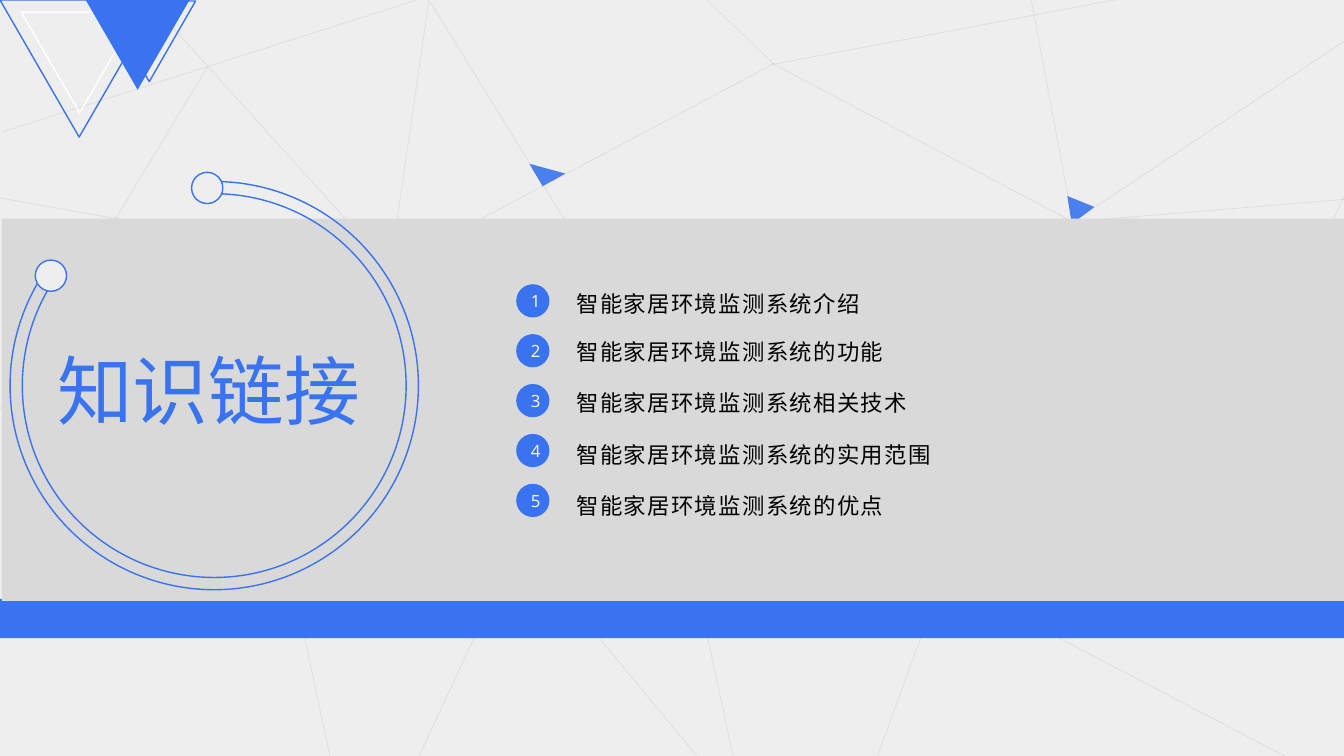
from lxml.etree import SubElement
from pptx import Presentation
from pptx.dml.color import RGBColor
from pptx.enum.shapes import MSO_CONNECTOR as Connector, MSO_SHAPE as Shape
from pptx.enum.text import MSO_ANCHOR as Anchor, MSO_AUTO_SIZE as AutoSize, PP_ALIGN as Align
from pptx.oxml.ns import qn
from pptx.util import Inches, Pt

BLUE = RGBColor(0x39, 0x73, 0xEF)
WHITE = RGBColor(0xFF, 0xFF, 0xFF)
BLACK = RGBColor(0x00, 0x00, 0x00)
PALE = RGBColor(0xEE, 0xEE, 0xEE)
PANEL = RGBColor(0xD9, 0xD9, 0xD9)
WEB = RGBColor(0xBF, 0xBF, 0xBF)

LATIN = "Open Sans"
CHINESE = "Noto Sans CJK SC"

WEB_LINES = [
    (1.43, -0.04, 3.87, 2.66), (3.87, 2.66, 4.26, -0.04), (7.68, 0.63, 3.85, 2.66),
    (4.26, -0.04, 0.02, 1.31), (7.32, 7.73, 6.42, 3.53), (3.83, 8.2, 5.15, 5.37),
    (-0.46, 4.82, 2.06, 0.66), (10.64, 2.2, 8.55, 7.92), (4.26, 0.01, 6.44, 3.54),
    (10.64, 2.2, 7.66, 0.63), (12.95, 7.61, 9.34, 5.72), (3.45, 8.34, 2.81, 5.33),
    (-1.15, 1.76, 3.86, 2.65), (-0.04, 6.34, 2.81, 5.33), (10.64, 2.2, 10.23, 0.01),
    (7.68, 0.64, 6.49, -0.5), (11.95, -0.17, 7.66, 0.64), (7.02, 7.63, 5.15, 5.37),
    (13.51, 0.29, 10.64, 2.2), (13.89, 5.46, 12.11, 4.6), (13.68, 1.95, 10.64, 2.2),
    (13.33, 1.95, 12.11, 4.6), (1.12, 2.17, 2.8, 5.32),
]

CORNER_TRIANGLES = [
    ((0, 0, 1.57, 1.36), None, BLUE),
    ((0.21, 0.12, 1.16, 1), None, WHITE),
    ((1.02, 0.01, 0.92, 0.8), None, BLUE),
    ((1.03, 0.08, 0.68, 0.58), None, WHITE),
    ((0.85, 0, 1.03, 0.89), BLUE, None),
]

TOPICS = [
    ("智能家居环境监测系统介绍", 2.71, 3.53),
    ("智能家居环境监测系统的功能", 3.18, 3.53),
    ("智能家居环境监测系统相关技术", 3.69, 3.53),
    ("智能家居环境监测系统的实用范围", 4.2, 4.1),
    ("智能家居环境监测系统的优点", 4.71, 4.1),
]
BADGE_TOP = 2.82
BADGE_STEP = 0.495


class SlideBuilder:
    def __init__(self, slide):
        self.slide = slide
        self.shapes = slide.shapes

    def start_group(self):
        self.shapes = self.slide.shapes.add_group_shape().shapes

    def end_group(self):
        self.shapes = self.slide.shapes

    def set_opacity(self, shape, percent):
        color = shape._element.spPr.find(".//" + qn("a:srgbClr"))
        SubElement(color, qn("a:alpha")).set("val", str(percent * 1000))

    def shape(self, kind, box, fill=None, line=None, rotation=0, opacity=100):
        shape = self.shapes.add_shape(kind, *map(Inches, box))
        shape.shadow.inherit = False
        shape.rotation = rotation
        if fill is None:
            shape.fill.background()
        else:
            shape.fill.solid()
            shape.fill.fore_color.rgb = fill
        if line is None:
            shape.line.fill.background()
        else:
            shape.line.color.rgb = line
            shape.line.width = Pt(1)
        if opacity < 100:
            self.set_opacity(shape, opacity)
        return shape

    def web_line(self, ends):
        connector = self.shapes.add_connector(Connector.STRAIGHT, *map(Inches, ends))
        connector.line.color.rgb = WEB
        connector.line.width = Pt(0.5)
        self.set_opacity(connector, 35)
        SubElement(connector._element.spPr, qn("a:effectLst"))

    def label(self, shape, text, size, font, color, spacing=0):
        paragraph = shape.text_frame.paragraphs[0]
        paragraph.text = text
        run = paragraph.runs[0]
        run.font.size = Pt(size)
        run.font.name = font
        run.font.color.rgb = color
        properties = run._r.get_or_add_rPr()
        SubElement(properties, qn("a:ea")).set("typeface", font)
        if spacing:
            properties.set("spc", str(spacing * 100))
        return paragraph

    def text(self, box, text, size, font, color, spacing=0):
        textbox = self.shapes.add_textbox(*map(Inches, box))
        textbox.text_frame.word_wrap = True
        textbox.text_frame.auto_size = AutoSize.SHAPE_TO_FIT_TEXT
        return self.label(textbox, text, size, font, color, spacing)

    def badge(self, number, top):
        badge = self.shape(Shape.OVAL, (5.12, top, 0.33, 0.33), BLUE)
        badge.text_frame.vertical_anchor = Anchor.MIDDLE
        paragraph = self.label(badge, str(number), 12, LATIN, WHITE)
        paragraph.alignment = Align.CENTER


def main():
    presentation = Presentation()
    presentation.slide_width = Inches(13.33)
    presentation.slide_height = Inches(7.5)
    builder = SlideBuilder(presentation.slides.add_slide(presentation.slide_layouts[6]))

    builder.shape(Shape.RECTANGLE, (0, -0.04, 13.36, 7.54), PALE)
    builder.start_group()
    for ends in WEB_LINES:
        builder.web_line(ends)
    builder.end_group()

    builder.shape(Shape.ISOSCELES_TRIANGLE, (10.53, 1.99, 0.29, 0.24), BLUE, rotation=202, opacity=90)
    builder.shape(Shape.RECTANGLE, (-0.03, 5.94, 13.36, 0.39), BLUE)
    builder.shape(Shape.RECTANGLE, (0.02, 2.17, 13.34, 3.79), PANEL)
    builder.text((0.47, 3.36, 3.3, 1.01), "知识链接", 54, LATIN, BLUE)

    builder.start_group()
    ring = builder.shape(Shape.BLOCK_ARC, (0.1, 1.8, 4.05, 4.05), line=BLUE, rotation=262.9)
    for index, value in enumerate((3.53, 186.97, 0.03)):
        ring.adjustments[index] = value
    for left, top in ((0.35, 2.58), (1.9, 1.71)):
        builder.shape(Shape.OVAL, (left, top, 0.31, 0.31), PALE, BLUE)
    builder.end_group()

    builder.start_group()
    for box, fill, line in CORNER_TRIANGLES:
        builder.shape(Shape.ISOSCELES_TRIANGLE, box, fill, line, rotation=180)
    builder.end_group()
    builder.shape(Shape.ISOSCELES_TRIANGLE, (5.22, 1.67, 0.37, 0.18), BLUE, rotation=195.3, opacity=90)

    for index, (topic, top, width) in enumerate(TOPICS):
        builder.badge(index + 1, BADGE_TOP + index * BADGE_STEP)
        paragraph = builder.text((5.62, top, width, 0.49), topic, 16, CHINESE, BLACK, spacing=1)
        paragraph.line_spacing = Pt(28)

    presentation.save("out.pptx")


if __name__ == "__main__":
    main()
